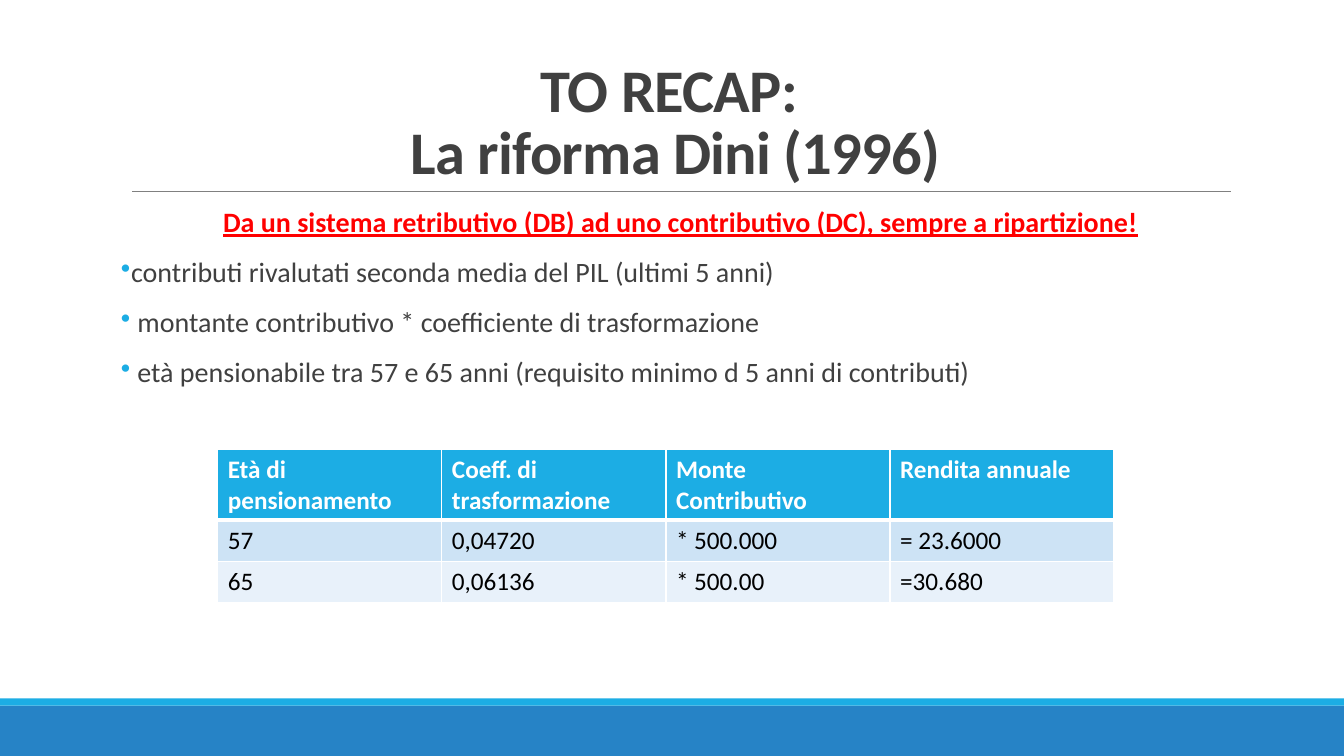
"""Builds a recap slide on the Dini pension reform with a table of coefficients."""
from dataclasses import dataclass

from lxml.etree import SubElement
from pptx import Presentation
from pptx.dml.color import RGBColor
from pptx.enum.shapes import MSO_CONNECTOR, MSO_SHAPE
from pptx.enum.text import MSO_ANCHOR, PP_ALIGN
from pptx.oxml.ns import qn
from pptx.util import Inches, Pt


@dataclass(frozen=True)
class Theme:
    font: str = "Calibri"
    blue: str = "2683C6"
    cyan: str = "1CADE4"
    rule: str = "808080"
    text: str = "404040"
    accent: str = "FF0000"
    white: str = "FFFFFF"
    black: str = "000000"
    row_fills: tuple = ("1CADE4", "CDE3F5", "E8F1FA")
    title_size: float = 43.2
    body_size: float = 20
    table_size: float = 18


theme = Theme()


def add_styled_run(paragraph, text, size, color, bold=False):
    run = paragraph.add_run()
    run.text = text
    run.font.name = theme.font
    run.font.size = Pt(size)
    run.font.bold = bold
    run.font.color.rgb = RGBColor.from_string(color)
    return run


def add_text_frame(shapes, left, top, width, height):
    frame = shapes.add_textbox(Inches(left), Inches(top), Inches(width), Inches(height)).text_frame
    frame.word_wrap = True
    return frame


presentation = Presentation()
presentation.slide_width = Inches(13.33)
presentation.slide_height = Inches(7.5)
slide = presentation.slides.add_slide(presentation.slide_layouts[6])

for top, height, color in ((7, 0.5, theme.blue), (6.93, 0.07, theme.cyan)):
    bar = slide.shapes.add_shape(MSO_SHAPE.RECTANGLE, 0, Inches(top), presentation.slide_width, Inches(height))
    bar.shadow.inherit = False
    bar.fill.solid()
    bar.fill.fore_color.rgb = RGBColor.from_string(color)
    bar.line.fill.background()

title_rule = slide.shapes.add_connector(
    MSO_CONNECTOR.STRAIGHT, Inches(1.31), Inches(1.9), Inches(12.21), Inches(1.9)
)
title_rule.line.color.rgb = RGBColor.from_string(theme.rule)
title_rule.line.width = Pt(0.5)
SubElement(title_rule._element.spPr, qn("a:effectLst"))

title_frame = add_text_frame(slide.shapes, 1.2, 0.31, 11, 1.59)
title_frame.vertical_anchor = MSO_ANCHOR.BOTTOM
title = title_frame.paragraphs[0]
title.alignment = PP_ALIGN.CENTER
title.line_spacing = 0.85
for index, line in enumerate(("TO RECAP: ", "La riforma Dini (1996)")):
    if index:
        title.add_line_break()
    run = add_styled_run(title, line, theme.title_size, theme.text, bold=True)
    run.font._element.set("spc", "-50")

body_frame = add_text_frame(slide.shapes, 1.2, 2.02, 11, 4.4)
body_frame.margin_left = body_frame.margin_right = 0
headline = body_frame.paragraphs[0]
headline.alignment = PP_ALIGN.CENTER
run = add_styled_run(
    headline,
    "Da un sistema retributivo (DB) ad uno contributivo (DC), sempre a ripartizione!",
    theme.body_size, theme.accent, bold=True,
)
run.font.underline = True

bullets = (
    "contributi rivalutati seconda media del PIL (ultimi 5 anni)",
    " montante contributivo * coefficiente di trasformazione",
    " età pensionabile tra 57 e 65 anni (requisito minimo d 5 anni di contributi)",
)
for bullet in bullets:
    paragraph = body_frame.add_paragraph()
    paragraph.alignment = PP_ALIGN.JUSTIFY
    add_styled_run(paragraph, bullet, theme.body_size, theme.text)

for paragraph in body_frame.paragraphs:
    paragraph.line_spacing = 0.9
    paragraph.space_before = Pt(12)
    paragraph.space_after = Pt(2)
    properties = paragraph._p.get_or_add_pPr()
    properties.set("marL", str(Inches(0.1)))
    if paragraph.alignment == PP_ALIGN.JUSTIFY:
        properties.set("indent", str(Inches(-0.1)))
        bullet_color = SubElement(properties, qn("a:buClr"))
        SubElement(bullet_color, qn("a:srgbClr"), val=theme.cyan)
        SubElement(properties, qn("a:buChar"), char="•")

rows = (
    ("Età di pensionamento", "Coeff. di trasformazione", "Monte Contributivo", "Rendita annuale"),
    ("57", "0,04720", "* 500.000", "= 23.6000"),
    ("65", "0,06136", "* 500.00", "=30.680"),
)
row_heights = (0.7, 0.41, 0.41)
table = slide.shapes.add_table(
    len(rows), len(rows[0]), Inches(2.16), Inches(4.46), Inches(8.89), Inches(sum(row_heights))
).table
for row_index, values in enumerate(rows):
    table.rows[row_index].height = Inches(row_heights[row_index])
    is_header = row_index == 0
    for column_index, value in enumerate(values):
        cell = table.cell(row_index, column_index)
        cell_properties = cell._tc.get_or_add_tcPr()
        top_width = 3 if row_index == 1 else 1
        bottom_width = 3 if is_header else 1
        for side, width in (("lnL", 1), ("lnR", 1), ("lnT", top_width), ("lnB", bottom_width)):
            border = SubElement(cell_properties, qn(f"a:{side}"), w=str(Pt(width)))
            border_fill = SubElement(border, qn("a:solidFill"))
            SubElement(border_fill, qn("a:srgbClr"), val=theme.white)
        cell.fill.solid()
        cell.fill.fore_color.rgb = RGBColor.from_string(theme.row_fills[row_index])
        color = theme.white if is_header else theme.black
        add_styled_run(cell.text_frame.paragraphs[0], value, theme.table_size, color, bold=is_header)

presentation.save("out.pptx")
